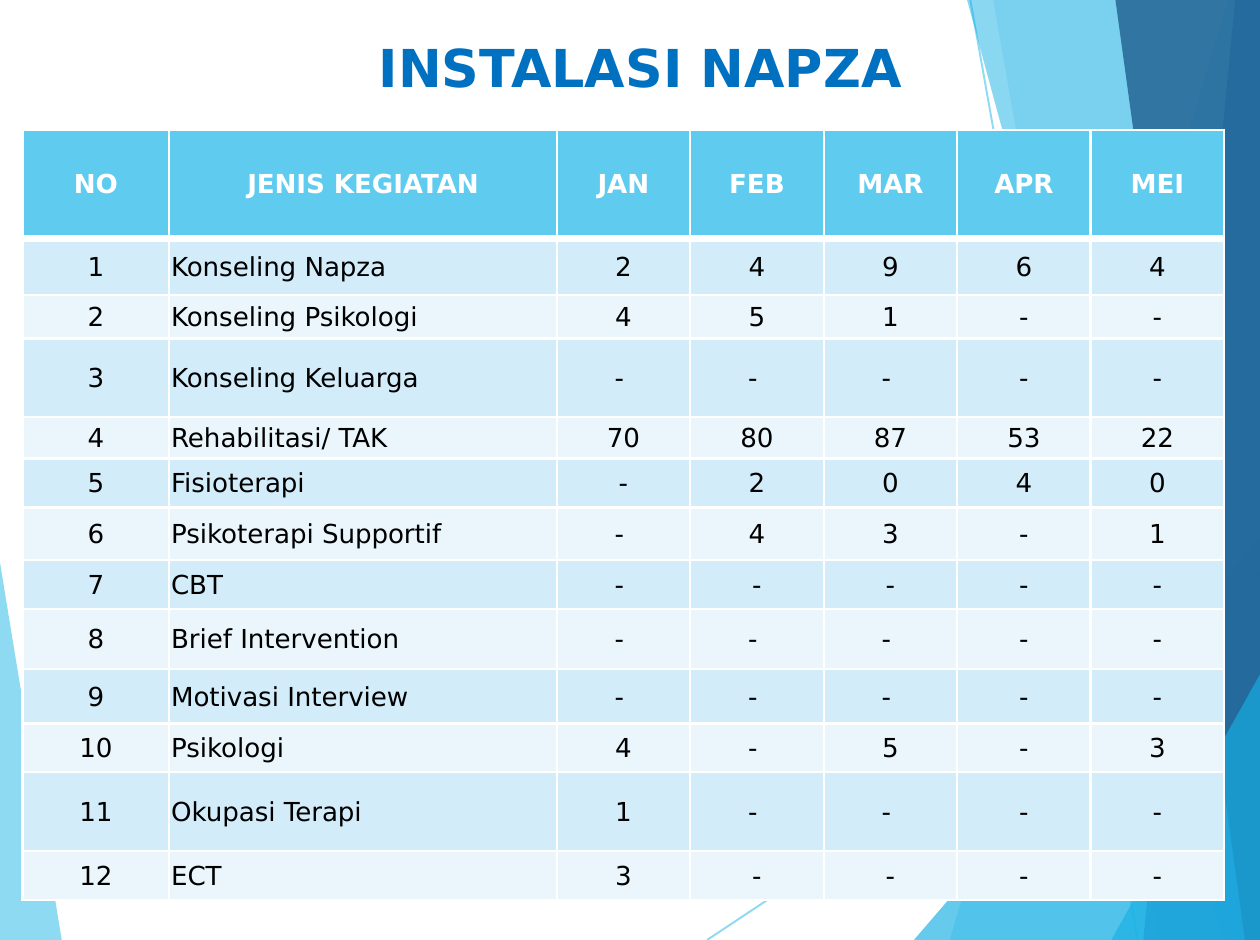
from dataclasses import dataclass

from lxml.etree import SubElement
from pptx import Presentation
from pptx.dml.color import RGBColor
from pptx.enum.shapes import MSO_CONNECTOR as Connector
from pptx.enum.text import MSO_ANCHOR as Anchor, PP_ALIGN as Align
from pptx.oxml.ns import qn
from pptx.slide import Slide
from pptx.table import _Cell as Cell
from pptx.util import Inches, Pt

FONT = "DejaVu Sans"
COLORS = {
    "sky": "5FCBEF",
    "cyan": "17B0E4",
    "blue": "2E83C3",
    "navy": "226292",
    "title": "0070C0",
    "band_dark": "D2ECF9",
    "band_light": "EAF6FC",
    "white": "FFFFFF",
    "black": "000000",
}

Point = tuple[float, float]


@dataclass
class Facet:
    points: list[Point]
    color: str
    opacity: int


@dataclass
class Ray:
    start: Point
    end: Point


LEFT_FACET = Facet([(-0.01, 2.93), (0.33, 5.01), (-0.01, 5)], "sky", 70)
RAYS = [Ray((3.76, 5), (6.71, 3.04)), Ray((5.16, 0), (6.05, 5))]
RIGHT_FACETS = [
    Facet([(6.53, 0), (5.05, 5), (6.71, 5.01), (6.71, 0.01)], "sky", 36),
    Facet([(5.28, -0.01), (6.16, 5), (6.71, 5), (6.71, -0.01)], "sky", 20),
    Facet([(4.86, 5), (6.7, 2.86), (6.71, 5)], "cyan", 66),
    Facet([(5.14, -0.01), (6.5, 5), (6.71, 4.99), (6.71, -0.01)], "cyan", 50),
    Facet([(6.57, -0.01), (6.08, 5), (6.71, 5), (6.7, -0.01)], "blue", 70),
    Facet([(5.93, -0.01), (6.62, 5), (6.71, 5), (6.7, -0.01)], "navy", 82),
    Facet([(5.91, 5), (6.71, 3.57), (6.71, 5)], "cyan", 66),
]

HEADERS = ["NO", "JENIS KEGIATAN", "JAN", "FEB", "MAR", "APR", "MEI"]
ACTIVITIES = [
    ("Konseling Napza", "2", "4", "9", "6", "4"),
    ("Konseling Psikologi", "4", "5", "1", "-", "-"),
    ("Konseling Keluarga", "- ", "- ", "- ", "-", "-"),
    ("Rehabilitasi/ TAK", "70", "80", "87", "53", "22"),
    ("Fisioterapi", "-", "2", "0", "4", "0"),
    ("Psikoterapi Supportif", "- ", "4", "3", "-", "1"),
    ("CBT", "- ", "-", "-", "-", "-"),
    ("Brief Intervention", "- ", "- ", "- ", "-", "-"),
    ("Motivasi Interview", "- ", "- ", "- ", "-", "-"),
    ("Psikologi", "4", "- ", "5", "-", "3"),
    ("Okupasi Terapi", "1", "- ", "- ", "-", "-"),
    ("ECT", "3", "-", "-", "-", "-"),
]
COLUMN_WIDTHS = [0.78, 2.06] + [0.71] * 5
ROW_HEIGHTS = [0.58, 0.3, 0.23, 0.42, 0.22, 0.26, 0.28, 0.26, 0.32, 0.29, 0.26, 0.42, 0.26]


def rgb(name: str) -> RGBColor:
    return RGBColor.from_string(COLORS[name])


def set_opacity(fill_parent, percent: int) -> None:
    color = next(fill_parent.iter(qn("a:srgbClr")))
    SubElement(color, qn("a:alpha"), val=str(percent * 1000))


def draw_facet(page: Slide, facet: Facet) -> None:
    start, *others = [(Inches(x), Inches(y)) for x, y in facet.points]
    builder = page.shapes.build_freeform(*start)
    builder.add_line_segments(others, close=True)
    shape = builder.convert_to_shape()
    shape.shadow.inherit = False
    shape.line.fill.background()
    shape.fill.solid()
    shape.fill.fore_color.rgb = rgb(facet.color)
    set_opacity(shape.fill._xPr, facet.opacity)


def draw_ray(page: Slide, ray: Ray) -> None:
    ends = [Inches(value) for value in ray.start + ray.end]
    connector = page.shapes.add_connector(Connector.STRAIGHT, *ends)
    connector.line.width = Pt(0.75)
    connector.line.color.rgb = rgb("sky")
    properties = connector._element.spPr
    set_opacity(properties, 70)
    SubElement(properties, qn("a:effectLst"))


def draw_title(page: Slide, text: str) -> None:
    box = page.shapes.add_textbox(Inches(0.36), Inches(0.14), Inches(6.09), Inches(0.55))
    box.text_frame.word_wrap = True
    box.text_frame.vertical_anchor = Anchor.TOP
    para = box.text_frame.paragraphs[0]
    para.text = text
    para.alignment = Align.CENTER
    para.font.name = FONT
    para.font.size = Pt(20)
    para.font.bold = True
    para.font.color.rgb = rgb("title")


def set_borders(cell: Cell, top: int, bottom: int) -> None:
    """Draw white borders; must run before the cell is filled, as the XML is ordered."""
    properties = cell._tc.get_or_add_tcPr()
    for side, width in (("L", 1), ("R", 1), ("T", top), ("B", bottom)):
        line = SubElement(properties, qn(f"a:ln{side}"), w=str(Pt(width)))
        fill = SubElement(line, qn("a:solidFill"))
        SubElement(fill, qn("a:srgbClr"), val=COLORS["white"])


def fill_cell(cell: Cell, text: str, row: int, column: int) -> None:
    is_header = row == 0
    set_borders(cell, top=3 if row == 1 else 1, bottom=3 if is_header else 1)
    cell.fill.solid()
    band = "band_dark" if row % 2 else "band_light"
    cell.fill.fore_color.rgb = rgb("sky" if is_header else band)
    cell.vertical_anchor = Anchor.MIDDLE
    if not is_header:
        cell.margin_left = cell.margin_right = cell.margin_top = Inches(0.01)
        cell.margin_bottom = 0
    para = cell.text_frame.paragraphs[0]
    para.text = text
    para.alignment = Align.LEFT if column == 1 and not is_header else Align.CENTER
    para.font.name = FONT
    para.font.size = Pt(10)
    para.font.bold = is_header
    para.font.color.rgb = rgb("white" if is_header else "black")


def draw_activity_table(page: Slide) -> None:
    rows = [HEADERS] + [[str(number), *activity] for number, activity in enumerate(ACTIVITIES, 1)]
    table = page.shapes.add_table(
        len(rows), len(HEADERS), Inches(0.12), Inches(0.69),
        Inches(sum(COLUMN_WIDTHS)), Inches(sum(ROW_HEIGHTS)),
    ).table
    for column, width in zip(table.columns, COLUMN_WIDTHS):
        column.width = Inches(width)
    for row, height in zip(table.rows, ROW_HEIGHTS):
        row.height = Inches(height)
    for row_index, texts in enumerate(rows):
        for column_index, text in enumerate(texts):
            fill_cell(table.cell(row_index, column_index), text, row_index, column_index)


def main() -> None:
    deck = Presentation()
    deck.slide_width = Inches(6.7)
    deck.slide_height = Inches(5)
    page = deck.slides.add_slide(deck.slide_layouts[6])
    draw_facet(page, LEFT_FACET)
    for ray in RAYS:
        draw_ray(page, ray)
    for facet in RIGHT_FACETS:
        draw_facet(page, facet)
    draw_title(page, "INSTALASI NAPZA")
    draw_activity_table(page)
    deck.save("out.pptx")


if __name__ == "__main__":
    main()
